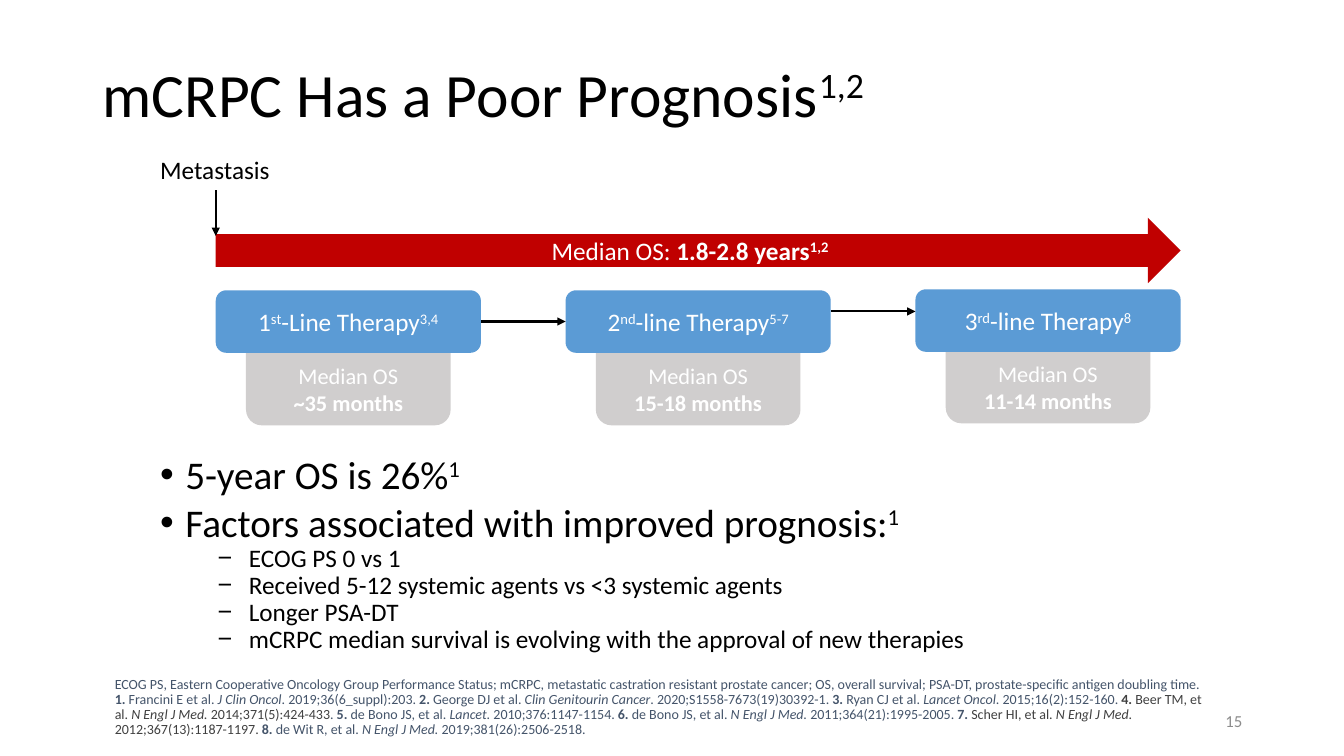
from itertools import groupby

from lxml import etree
from pptx import Presentation
from pptx.dml.color import RGBColor
from pptx.enum.shapes import MSO_CONNECTOR, MSO_SHAPE
from pptx.enum.text import MSO_ANCHOR, PP_ALIGN
from pptx.oxml.ns import qn
from pptx.util import Inches, Pt

ROUND, ARROW = MSO_SHAPE.ROUNDED_RECTANGLE, MSO_SHAPE.RIGHT_ARROW
LINE = MSO_CONNECTOR.STRAIGHT
TOP, MID, LOW = MSO_ANCHOR.TOP, MSO_ANCHOR.MIDDLE, MSO_ANCHOR.BOTTOM
LEFT, CENTER, RIGHT = PP_ALIGN.LEFT, PP_ALIGN.CENTER, PP_ALIGN.RIGHT
FONT = "Calibri"
MARKS = "^*|@"
COLORS = {"black": "000000", "white": "FFFFFF", "red": "C00000",
          "blue": "5B9BD5", "gray": "D0CECE", "page": "8C8C8C",
          "slate": "44546A", "dark": "404040"}

THERAPIES = [
    ("1^st^-Line Therapy^3,4^", "~35 months", 0, 0),
    ("2^nd^-line Therapy^5-7^", "15-18 months", 0, 0),
    ("3^rd^-line Therapy^8^", "11-14 months", -0.01, -0.02),
]
POINTS = ["5-year OS is 26%^1^",
          "Factors associated with improved prognosis:^1^"]
FACTORS = ["ECOG PS 0 vs 1",
           "Received 5-12 systemic agents vs <3 systemic agents",
           "Longer PSA-DT",
           "mCRPC median survival is evolving with the approval of new therapies"]
TERMS = ("ECOG PS, Eastern Cooperative Oncology Group Performance Status; "
         "mCRPC, metastatic castration resistant prostate cancer; OS, overall "
         "survival; PSA-DT, prostate-specific antigen doubling time.")
SOURCES = (
    "*1. *Francini E et al. |J Clin Oncol|. 2019;36(6_suppl):203. "
    "*2. *George DJ et al. |Clin Genitourin Cancer|. 2020;S1558-7673(19)30392-1. "
    "*3. *Ryan CJ et al. |Lancet Oncol|. 2015;16(2):152-160."
    "@* 4. *Beer TM, et al. |N Engl J Med. |2014;371(5):424-433@. "
    "*5. *de Bono JS, et al. |Lancet. |2010;376:1147-1154. "
    "*6. *de Bono JS, et al. |N Engl J Med. |2011;364(21):1995-2005. "
    "*7. *@Scher HI, et al. |N Engl J Med. |2012;367(13):1187-1197. @"
    "*8. *de Wit R, et al. |N Engl J Med. |2019;381(26):2506-2518.")


def paint(name):
    """Return the named colour."""
    return RGBColor.from_string(COLORS[name])


def write(par, text, size, color, align=LEFT, space=None):
    """Fill a paragraph; ^ raises, * bolds, | slants and @ darkens."""
    par.alignment = align
    par.line_spacing = space
    par.font.name, par.font.size = FONT, Pt(size)
    par.font.color.rgb = paint(color)
    state = set()
    for mark, chars in groupby(text, lambda char: char in MARKS):
        if mark:
            state ^= set(chars)
            continue
        run = par.add_run()
        run.text = "".join(chars)
        if "*" in state:
            run.font.bold = True
        if "|" in state:
            run.font.italic = True
        if "@" in state:
            run.font.color.rgb = paint("dark")
        if "^" in state:
            run._r.get_or_add_rPr().set("baseline", "30000")


def fill(frame, lines, size, color, align=LEFT, anchor=TOP, space=None):
    """Write lines of one style into a text frame."""
    frame.word_wrap = True
    frame.vertical_anchor = anchor
    for num, text in enumerate(lines):
        par = frame.add_paragraph() if num else frame.paragraphs[0]
        write(par, text, size, color, align, space)


def label(slide, box, lines, size, color, **style):
    """Add a text box and return its frame."""
    frame = slide.shapes.add_textbox(*map(Inches, box)).text_frame
    fill(frame, lines, size, color, **style)
    return frame


def block(slide, kind, box, color, lines, size, anchor=MID):
    """Add a filled shape with centred white text."""
    shape = slide.shapes.add_shape(kind, *map(Inches, box))
    shape.shadow.inherit = False
    shape.fill.solid()
    shape.fill.fore_color.rgb = paint(color)
    shape.line.fill.background()
    fill(shape.text_frame, lines, size, "white", CENTER, anchor)


def arrow(slide, *ends):
    """Add a black line with an arrowhead at its end."""
    link = slide.shapes.add_connector(LINE, *map(Inches, ends))
    link.line.color.rgb = paint("black")
    link.line.width = Pt(1.5)
    props = link._element.spPr
    etree.SubElement(props.find(qn("a:ln")), qn("a:tailEnd"), type="triangle")
    etree.SubElement(props, qn("a:effectLst"))


def bullet(par, char, left, hang):
    """Give a paragraph a bullet and a hanging indent."""
    props = par._p.get_or_add_pPr()
    props.set("marL", str(Inches(left)))
    props.set("indent", str(-Inches(hang)))
    etree.SubElement(props, qn("a:buFont"), typeface="Arial")
    etree.SubElement(props, qn("a:buChar"), char=char)


def course(slide, left, top, width):
    """Draw the survival arrow and the three lines of therapy."""
    wide, high, inset = 2.63, 0.62, 0.3
    step = (width - wide) / (len(THERAPIES) - 1)
    row = top + 0.72
    for num, (_, months, _, shift) in enumerate(THERAPIES):
        box = (left + num * step + inset, row + 0.4 + shift,
               wide - 2 * inset, 0.94)
        block(slide, ROUND, box, "gray", ["Median OS", f"*{months}*"], 16, LOW)
    for num, (name, _, shift, _) in enumerate(THERAPIES):
        box = (left + num * step, row + shift, wide, high)
        block(slide, ROUND, box, "blue", [name], 18)
    for num, drop in enumerate((0.31, 0.21)):
        start = left + num * step + wide
        arrow(slide, start, row + drop, start + step - wide, row + drop)
    block(slide, ARROW, (left, top, width, 0.65), "red",
          ["Median OS: *1.8-2.8 years^1,2^*"], 18)
    note = label(slide, (left - 0.65, top - 0.68, 1.3, 0.4),
                 ["Metastasis"], 18, "black")
    note.word_wrap = False
    arrow(slide, left, top - 0.27, left, top + 0.18)


def outlook(slide, box):
    """List the prognosis points and the factors under them."""
    frame = slide.shapes.add_textbox(*map(Inches, box)).text_frame
    frame.word_wrap = True
    for num, text in enumerate(POINTS + FACTORS):
        par = frame.add_paragraph() if num else frame.paragraphs[0]
        if num < len(POINTS):
            bullet(par, "•", 0.25, 0.25)
            write(par, text, 28, "black", space=0.9 if num else None)
            par.space_before = Pt(4 if num else 0)
        else:
            bullet(par, "−", 0.88, 0.31)
            write(par, text, 18, "black", space=0.9)


def main():
    """Build and save the slide."""
    deck = Presentation()
    deck.slide_width, deck.slide_height = Inches(13.33), Inches(7.5)
    slide = deck.slides.add_slide(deck.slide_layouts[6])
    label(slide, (0.92, 0.24, 11.5, 1.45), ["mCRPC Has a Poor Prognosis^1,2^"],
          44, "black", anchor=MID, space=0.9)
    outlook(slide, (1.49, 4.42, 11.08, 2.14))
    label(slide, (9.42, 6.95, 3, 0.4), ["15"], 12, "page",
          align=RIGHT, anchor=MID)
    course(slide, 2.14, 2.16, 9.57)
    label(slide, (1.04, 6.67, 11.08, 0.97), [TERMS, SOURCES], 10, "slate",
          space=0.9)
    deck.save("out.pptx")


if __name__ == "__main__":
    main()
